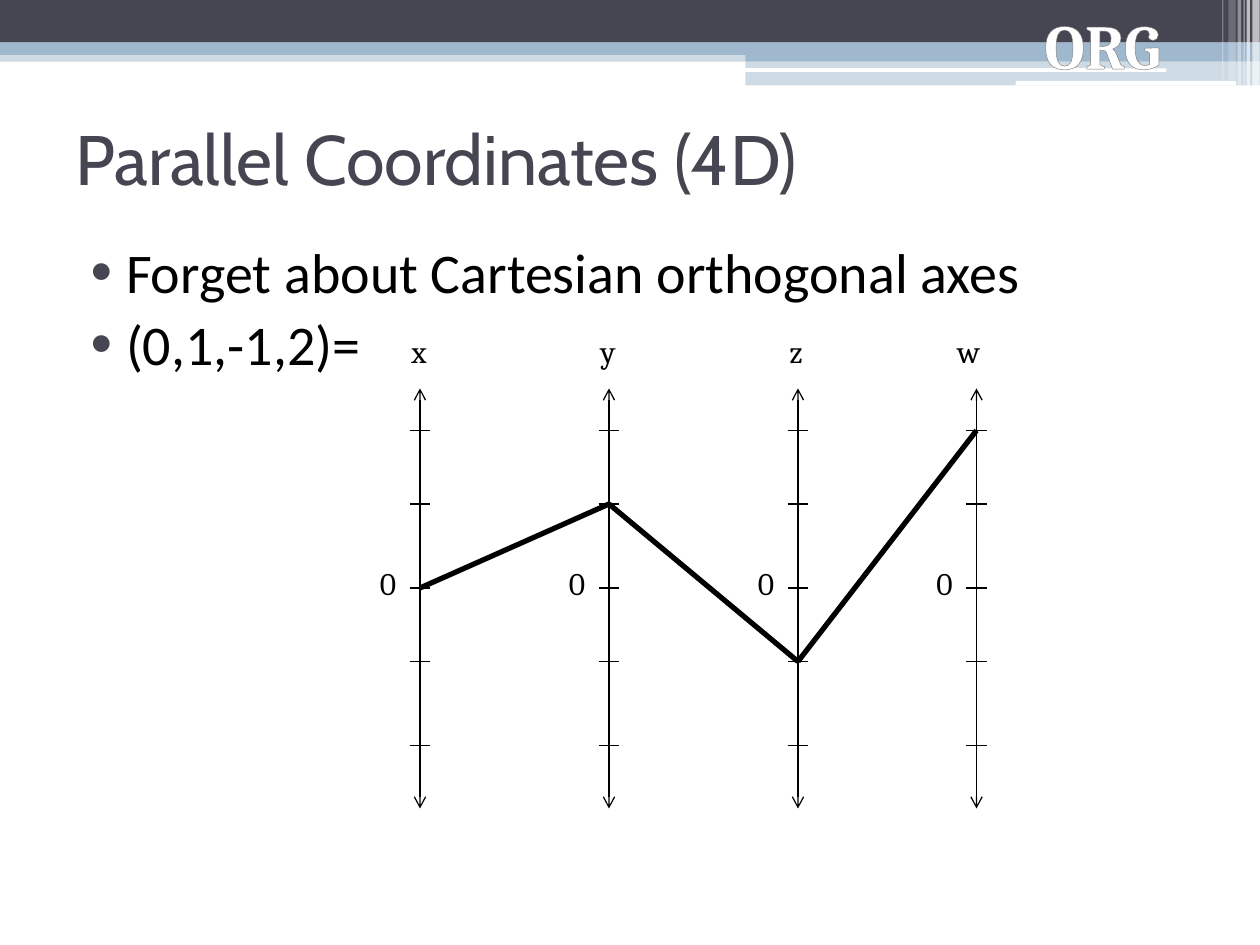
from lxml import etree
from pptx import Presentation
from pptx import util as u
from pptx.dml import color
from pptx.enum import shapes, text
from pptx.oxml import ns

DARK = color.RGBColor(0x46, 0x46, 0x53)
BLUE = color.RGBColor(0x9F, 0xB8, 0xCD)
WHITE = color.RGBColor(0xFF, 0xFF, 0xFF)
BLACK = color.RGBColor(0x00, 0x00, 0x00)
GREY = color.RGBColor(0x7D, 0x7D, 0x7D)

BARS = [
    (0, 28.8, 720, 6.5, BLUE, 50),
    (0, 0, 720, 24.4, DARK, 100),
    (0, 24.2, 720, 7.2, BLUE, 100),
    (426, 28, 294, 7, BLUE, 100),
    (426, 34.6, 294, 14.2, BLUE, 50),
]
ROUNDED_BARS = [(425.5, 39, 241, 2), (580.3, 46.3, 126, 2.6)]
STRIPES = [
    (715.7, 4.2, 49, 65),
    (712.3, 2, 49, 65),
    (710.6, 0.7, 49, 60),
    (707.2, 2, 49, 40),
    (702, 4.2, 46, 20),
    (698.4, 0.7, 46, 30),
]
AXES = {"x": 240, "y": 348, "z": 456, "w": 558}
TICKS = {2: 246, 1: 288, 0: 336, -1: 378, -2: 426}
POINT = (0, 1, -1, 2)
AXIS_TOP, AXIS_BOTTOM, TICK_HALF = 222, 462, 6


def add_xml(parent, tag, **attributes):
    return etree.SubElement(parent, ns.qn(tag), attributes)


def write(para, content, font, size, ink=BLACK, bold=False, align=text.PP_ALIGN.LEFT):
    para.alignment = align
    span = para.add_run()
    span.text = content
    span.font.name = font
    span.font.size = u.Pt(size)
    span.font.bold = bold
    span.font.color.rgb = ink
    return span


class Canvas:
    label_font = "Cambria"
    title_font = "Cabin"
    body_font = "Calibri"

    def __init__(self, page):
        self.page = page

    def place(self, box, left, top, width, height):
        box.left, box.top = u.Pt(left), u.Pt(top)
        box.width, box.height = u.Pt(width), u.Pt(height)

    def bar(self, left, top, width, height, ink, opacity=100, rounded=False):
        kind = shapes.MSO_SHAPE.ROUNDED_RECTANGLE if rounded else shapes.MSO_SHAPE.RECTANGLE
        box = self.page.shapes.add_shape(
            kind, u.Pt(left), u.Pt(top), u.Pt(width), u.Pt(height))
        box.shadow.inherit = False
        box.line.fill.background()
        box.fill.solid()
        box.fill.fore_color.rgb = ink
        if opacity < 100:
            tint = box._element.spPr.find(".//" + ns.qn("a:srgbClr"))
            add_xml(tint, "a:alpha", val=str(opacity * 1000))

    def line(self, start, end, weight=0.75, arrows=False):
        line = self.page.shapes.add_connector(
            shapes.MSO_CONNECTOR.STRAIGHT, *map(u.Pt, start + end))
        line.line.color.rgb = BLACK
        line.line.width = u.Pt(weight)
        if arrows:
            for tag in ("a:headEnd", "a:tailEnd"):
                add_xml(line.line._get_or_add_ln(), tag, type="arrow")
        add_xml(line._element.spPr, "a:effectLst")

    def label(self, content, left, top, width, height, size=18, **style):
        box = self.page.shapes.add_textbox(
            u.Pt(left), u.Pt(top), u.Pt(width), u.Pt(height))
        box.text_frame.word_wrap = True
        return write(box.text_frame.paragraphs[0], content, self.label_font, size, **style)

    def title(self, content):
        box = self.page.shapes.title
        self.place(box, 36, 48, 648, 84)
        box.text_frame.auto_size = text.MSO_AUTO_SIZE.NONE
        box.text_frame.vertical_anchor = text.MSO_ANCHOR.MIDDLE
        write(box.text_frame.paragraphs[0], content, self.title_font, 40, ink=DARK)

    def bullets(self, items):
        box = self.page.placeholders[1]
        self.place(box, 36, 132, 648, 379.5)
        frame = box.text_frame
        frame.auto_size = text.MSO_AUTO_SIZE.NONE
        for index, item in enumerate(items):
            para = frame.add_paragraph() if index else frame.paragraphs[0]
            write(para, item, self.body_font, 32)
            para.space_before = u.Pt(3)
            layout = para._p.get_or_add_pPr()
            layout.set("marL", str(u.Pt(28.8)))
            layout.set("indent", str(u.Pt(-20.2)))
            add_xml(add_xml(layout, "a:buClr"), "a:srgbClr", val=str(DARK))
            add_xml(layout, "a:buSzPct", val="110000")
            add_xml(layout, "a:buChar", char="•")

    def banner(self, name):
        for bar in BARS:
            self.bar(*bar)
        for bar in ROUNDED_BARS:
            self.bar(*bar, WHITE, rounded=True)
        for left, width, height, opacity in STRIPES:
            self.bar(left, 0, width, height, WHITE, opacity)
        span = self.label(name, 576, 0, 108, 51, size=36, ink=WHITE, bold=True,
                          align=text.PP_ALIGN.CENTER)
        outline = etree.Element(ns.qn("a:ln"), w=str(u.Pt(0.83)))
        add_xml(add_xml(outline, "a:solidFill"), "a:srgbClr", val=str(GREY))
        span._r.get_or_add_rPr().insert(0, outline)

    def axis(self, name, x):
        self.line((x, AXIS_TOP), (x, AXIS_BOTTOM), arrows=True)
        for y in TICKS.values():
            self.line((x - TICK_HALF, y), (x + TICK_HALF, y))
        self.label("0", x - 30, 319, 18, 29)
        half = 18 if name == "w" else 12
        self.label(name, x - half, 186, half + 18, 36)


def main():
    deck = Presentation()
    deck.slide_width, deck.slide_height = u.Pt(720), u.Pt(540)
    canvas = Canvas(deck.slides.add_slide(deck.slide_layouts[1]))
    canvas.banner("ORG")
    canvas.title("Parallel Coordinates (4D)")
    canvas.bullets(["Forget about Cartesian orthogonal axes", "(0,1,-1,2)="])
    for name, x in AXES.items():
        canvas.axis(name, x)
    corners = [(x, TICKS[value]) for x, value in zip(AXES.values(), POINT)]
    for start, end in zip(corners, corners[1:]):
        canvas.line(start, end, weight=3)
    deck.save("out.pptx")


if __name__ == "__main__":
    main()
